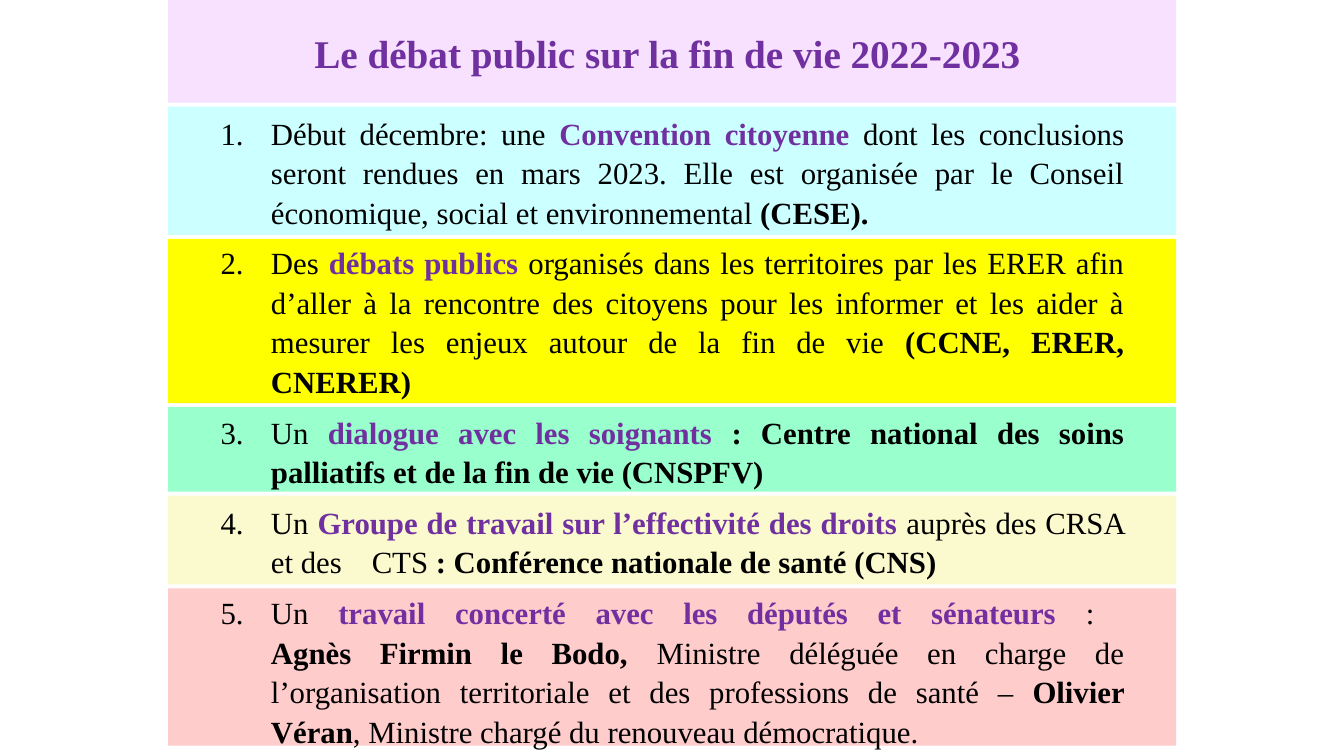
from lxml.etree import SubElement
from pptx import Presentation
from pptx.dml.color import RGBColor
from pptx.enum.shapes import MSO_SHAPE as Preset
from pptx.enum.text import MSO_ANCHOR as Anchor, PP_ALIGN as Align
from pptx.oxml.ns import qn
from pptx.util import Cm, Pt

FONT = "Times New Roman"
PURPLE = "7030A0"
BLACK = "000000"
GAP = 0.1
LEFT, WIDTH = 4.24, 25.4
HEADER_HEIGHT = 2.59
TITLE = "Le débat public sur la fin de vie 2022-2023 "

PLAIN = {"color": BLACK, "bold": False}
STRONG = {"color": BLACK, "bold": True}
TOPIC = {"color": PURPLE, "bold": True}

BANDS = [("CCFFFF", 3.23), ("FFFF00", 4.14), ("99FFCC", 2.13), ("FBFACE", 2.24), ("FFCCCC", 3.96)]

ITEMS = [
    [("Début décembre: une ", PLAIN), ("Convention citoyenne ", TOPIC),
     ("dont les conclusions seront rendues en mars 2023. Elle est organisée par "
      "le Conseil économique, social et environnemental ", PLAIN),
     ("(CESE).", STRONG)],
    [("Des ", PLAIN), ("débats publics ", TOPIC),
     ("organisés dans les territoires par les ERER afin d’aller à la rencontre des citoyens "
      "pour les informer et les aider à mesurer les enjeux autour de la fin de vie ", PLAIN),
     ("(CCNE, ERER, CNERER)", STRONG)],
    [("Un ", PLAIN), ("dialogue avec les soignants ", TOPIC),
     (": Centre national des soins palliatifs et de la fin de vie (CNSPFV)", STRONG)],
    [("Un ", PLAIN), ("Groupe de travail sur l’effectivité des droits ", TOPIC),
     ("auprès des CRSA et des \tCTS ", PLAIN),
     (": Conférence nationale de santé (CNS)", STRONG)],
    [("Un ", PLAIN), ("travail concerté avec les députés et sénateurs ", TOPIC),
     (": \n", PLAIN), ("Agnès Firmin le Bodo, ", STRONG),
     ("Ministre déléguée en charge de l’organisation territoriale "
      "et des professions de santé – ", PLAIN),
     ("Olivier Véran", STRONG), (", Ministre chargé du renouveau démocratique.", PLAIN)],
]


def rgb(value):
    """Turn a hex string into a colour."""
    return RGBColor.from_string(value)


def add_text(paragraph, text, size=22, color=BLACK, bold=False):
    """Append formatted text, turning a final newline into a line break."""
    run = paragraph.add_run()
    run.text = text.rstrip("\n")
    run.font.name = FONT
    run.font.size = Pt(size)
    run.font.bold = bold
    run.font.color.rgb = rgb(color)
    if text.endswith("\n"):
        paragraph.add_line_break()


def format_paragraph(paragraph, alignment):
    """Set the alignment and spacing shared by all paragraphs."""
    paragraph.alignment = alignment
    paragraph.line_spacing = 1.07
    paragraph.space_after = Pt(8)


def number_paragraph(paragraph):
    """Give a paragraph a hanging automatic number."""
    properties = paragraph._p.get_or_add_pPr()
    properties.set("marL", str(Cm(1.27)))
    properties.set("indent", str(-Cm(1.27)))
    SubElement(properties, qn("a:buFont"), typeface="+mj-lt")
    SubElement(properties, qn("a:buAutoNum"), type="arabicPeriod")


def add_band(slide, left, top, width, height, color):
    """Draw a plain coloured rectangle."""
    shape = slide.shapes.add_shape(Preset.RECTANGLE, Cm(left), Cm(top), Cm(width), Cm(height))
    shape.shadow.inherit = False
    shape.fill.solid()
    shape.fill.fore_color.rgb = rgb(color)
    shape.line.fill.background()
    return shape


def add_header(slide, left, top, width, height):
    """Place the title on its band."""
    frame = add_band(slide, left, top, width, height, "F7E1FF").text_frame
    frame.word_wrap = True
    frame.vertical_anchor = Anchor.MIDDLE
    paragraph = frame.paragraphs[0]
    format_paragraph(paragraph, Align.CENTER)
    add_text(paragraph, TITLE, size=28, color=PURPLE, bold=True)


def add_debate_list(slide, left, top, width, height):
    """Stack the bands and lay the numbered list over them."""
    band_top = top
    for color, band_height in BANDS:
        add_band(slide, left, band_top, width, band_height, color)
        band_top += band_height + GAP
    box = slide.shapes.add_textbox(Cm(left + 1.07), Cm(top), Cm(width - 2.13), Cm(height))
    frame = box.text_frame
    frame.word_wrap = True
    for index, parts in enumerate(ITEMS):
        paragraph = frame.add_paragraph() if index else frame.paragraphs[0]
        format_paragraph(paragraph, Align.JUSTIFY)
        number_paragraph(paragraph)
        for text, style in parts:
            add_text(paragraph, text, **style)


def main():
    """Build and save the slide."""
    presentation = Presentation()
    presentation.slide_width = Cm(33.87)
    presentation.slide_height = Cm(19.05)
    slide = presentation.slides.add_slide(presentation.slide_layouts[6])
    list_top = HEADER_HEIGHT + GAP
    add_header(slide, LEFT, 0, WIDTH, HEADER_HEIGHT)
    add_debate_list(slide, LEFT, list_top, WIDTH, 19.05 - list_top)
    presentation.save("out.pptx")


if __name__ == "__main__":
    main()
